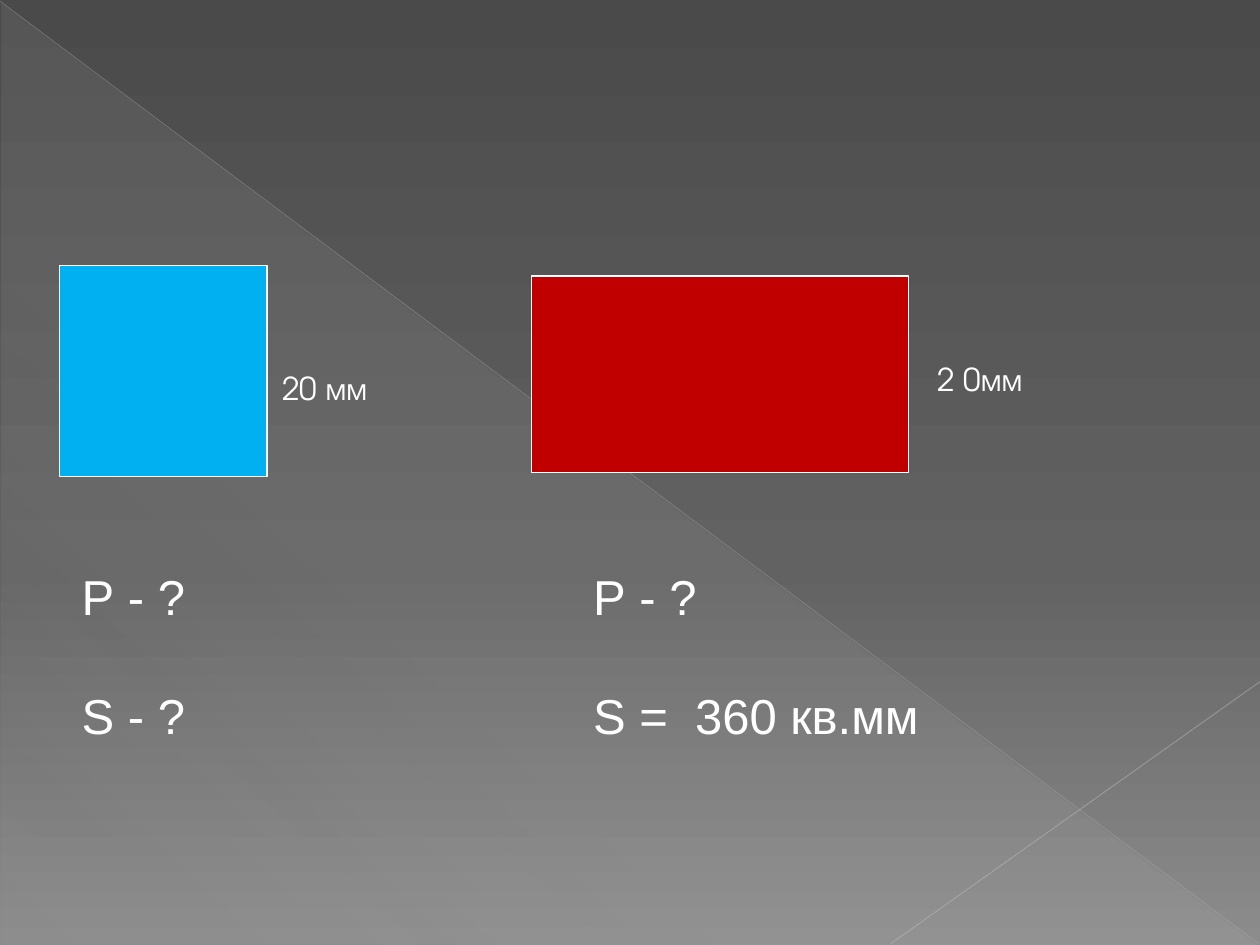
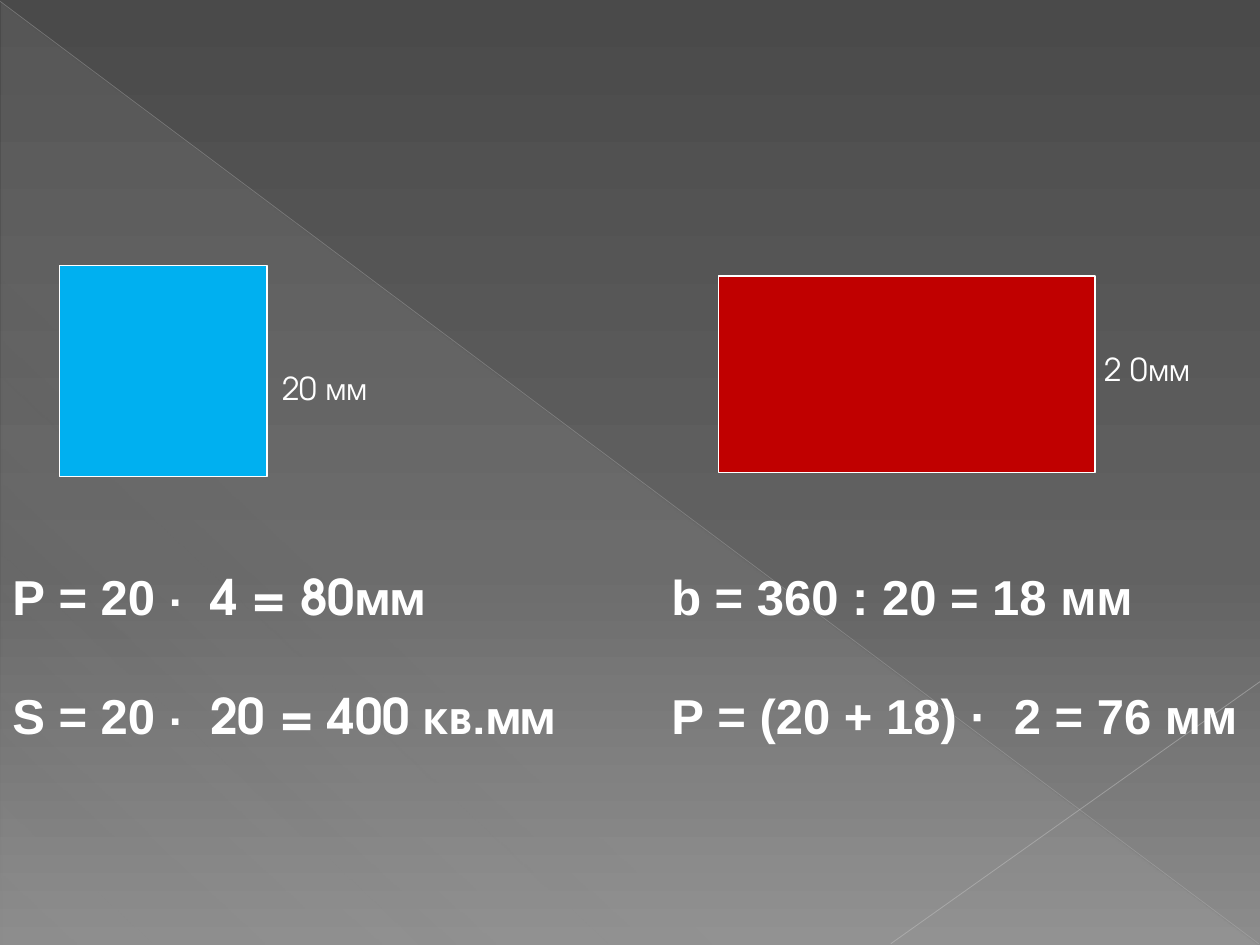
from lxml import etree
from pptx import Presentation
from pptx import util as u
from pptx.dml.color import RGBColor
from pptx.enum import shapes, text
from pptx.oxml.ns import qn

COLOURS = {
    "square": "00B0F0", "rectangle": "C00000", "white": "FFFFFF",
    "top": "4A4A4A", "middle": "626262", "bottom": "8C8C8C",
    "veil": "D2D2D2", "diagonal": "BFBFBF", "corner": "C6C6C6",
}
PLAIN, ROUND = "Arial", "TeX Gyre Adventor"


def set_gradient(fill, element, angle, stops):
    """Fill with (position, colour name, opacity) stops; angle is clockwise."""
    fill.gradient()
    fill.gradient_angle = 360 - angle
    stop_list = element.find(".//" + qn("a:gsLst"))
    for old_stop in list(stop_list):
        stop_list.remove(old_stop)
    for position, name, opacity in stops:
        stop = etree.SubElement(stop_list, qn("a:gs"), pos=str(position * 1000))
        colour = etree.SubElement(stop, qn("a:srgbClr"), val=COLOURS[name])
        if opacity < 100:
            etree.SubElement(colour, qn("a:alpha"), val=str(opacity * 1000))


def write(page, lines, left, top, width, height, size=18, bold=False, gap=0):
    """Add a text box; each line is a list of (words, font) pairs."""
    box = page.shapes.add_textbox(*map(u.Inches, (left, top, width, height)))
    frame = box.text_frame
    frame.word_wrap = True
    frame.auto_size = text.MSO_AUTO_SIZE.NONE
    for number, line in enumerate(lines):
        para = frame.add_paragraph() if number else frame.paragraphs[0]
        para.space_before = u.Pt(gap if number else 0)
        for words, font in line:
            span = para.add_run()
            span.text = words
            span.font.name = font
            span.font.size = u.Pt(size)
            span.font.bold = bold
            span.font.color.rgb = RGBColor.from_string(COLOURS["white"])


deck = Presentation()
deck.slide_width, deck.slide_height = u.Inches(10), u.Inches(7.5)
blank = deck.slide_layouts[6]
master = deck.slide_master
pages = [deck.slides.add_slide(blank) for _ in range(2)]

# Shared background
set_gradient(master.background.fill, master.element, 90,
             [(0, "top", 100), (60, "middle", 100), (100, "bottom", 100)])

# Shared decoration, drawn once and moved to the master
veil = pages[0].shapes.add_shape(
    shapes.MSO_SHAPE.RIGHT_TRIANGLE, *map(u.Inches, (0.01, 0.02, 9.98, 7.48)))
veil.shadow.inherit = False
veil.line.fill.background()
set_gradient(veil.fill, veil.element, 133,
             [(0, "veil", 10), (70, "veil", 8), (100, "veil", 1)])
decoration = [veil]
for ends, name, weight, opacity in [
    ((0, 0.01, 9.99, 7.49), "diagonal", 0.39, 35),
    ((10, 5.41, 7.07, 7.49), "corner", 0.47, 45),
]:
    line = pages[0].shapes.add_connector(
        shapes.MSO_CONNECTOR.STRAIGHT, *map(u.Inches, ends))
    line.line.width = u.Pt(weight)
    line.line.color.rgb = RGBColor.from_string(COLOURS[name])
    colour = line.element.find(".//" + qn("a:ln")).find(".//" + qn("a:srgbClr"))
    etree.SubElement(colour, qn("a:alpha"), val=str(opacity * 1000))
    etree.SubElement(line.element.spPr, qn("a:effectLst"))
    decoration.append(line)
for item in decoration:
    master.element.cSld.spTree.append(item.element)

# Figures with their side labels: the red one moves between the slides
for page, red_left, label_left, label_top in [
    (pages[0], 4.22, 7.34, 2.81),
    (pages[1], 5.7, 8.67, 2.73),
]:
    for name, place in [
        ("square", (0.47, 2.11, 1.65, 1.67)),
        ("rectangle", (red_left, 2.19, 2.99, 1.56)),
    ]:
        figure = page.shapes.add_shape(
            shapes.MSO_SHAPE.RECTANGLE, *map(u.Inches, place))
        figure.shadow.inherit = False
        figure.fill.solid()
        figure.fill.fore_color.rgb = RGBColor.from_string(COLOURS[name])
        figure.line.color.rgb = RGBColor.from_string(COLOURS["white"])
        figure.line.width = u.Pt(0.75)
    write(page, [[("20 мм", ROUND)]], 2.14, 2.88, 1.18, 0.4)
    write(page, [[("2 0мм", ROUND)]], label_left, label_top, 1.3, 0.4)

# Questions on the first slide, solutions on the second
for page, left, width, bold, lines in [
    (pages[0], 0.55, 1.41, False, [[("Р - ?", PLAIN)], [("S - ?", PLAIN)]]),
    (pages[0], 4.61, 3, False,
     [[("Р - ?", PLAIN)], [("S =  360 кв.мм", PLAIN)]]),
    (pages[1], 0, 5.31, True,
     [[("Р = 20 ", PLAIN), ("·  4 = 80мм", ROUND)],
      [("S = 20 ", PLAIN), ("·  20 = 400 кв.мм", ROUND)]]),
    (pages[1], 5.23, 4.76, True,
     [[("b = 360 : 20 = 18 мм", PLAIN)],
      [("Р = (20 + 18) ·  2 = 76 мм", PLAIN)]]),
]:
    write(page, lines, left, 4.45, width, 1.51, size=28, bold=bold, gap=34)

deck.save("out.pptx")
